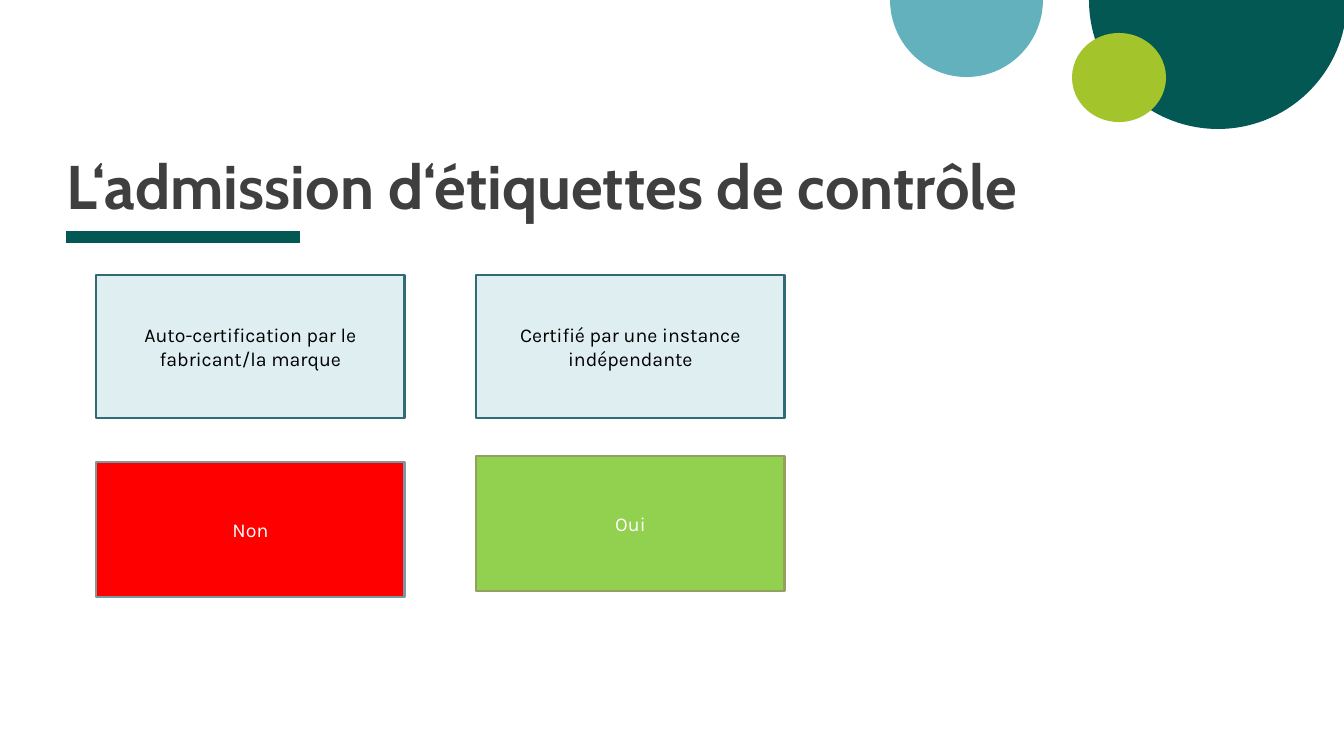
"""Build the slide on the admission of control labels."""
from dataclasses import dataclass

from lxml.etree import SubElement
from pptx import Presentation
from pptx.dml.color import RGBColor
from pptx.enum.shapes import MSO_CONNECTOR, MSO_SHAPE
from pptx.enum.text import MSO_ANCHOR, PP_ALIGN
from pptx.oxml.ns import qn
from pptx.util import Emu, Pt

TITLE = "L‘admission d‘étiquettes de contrôle"
COLUMNS = [
    {"label": "Auto-certification par le fabricant/la marque",
     "answer": "Non", "fill": "FF0000", "line": "7B9A9F", "answer_top": 462},
    {"label": "Certifié par une instance indépendante",
     "answer": "Oui", "fill": "92D050", "line": "949F60", "answer_top": 456},
]
HALF_DISCS = [
    ((1089, -129, 258, 258), "035854"),
    ((890, -78, 153, 155), "64B1BE"),
]
SMALL_DISC = ((1072, 33, 94, 89), "A3C42A")
TITLE_FRAME = (67, 46, 1087, 175)
RULE_LEFT, RULE_RIGHT, RULE_TOP = 66, 300, 237
COLUMN_LEFT, COLUMN_PITCH, BOX_WIDTH = 96, 380, 309
LABEL_TOP, LABEL_HEIGHT, ANSWER_HEIGHT = 275, 143, 135
SLIDE_WIDTH, SLIDE_HEIGHT = 1344, 756
HALF_TURN = 108


@dataclass(frozen=True)
class Theme:
    heading_font: str = "Cabin"
    body_font: str = "Karla"
    heading_size: int = 44
    body_size: int = 14
    heading: str = "3F3F3F"
    rule: str = "035854"
    label_fill: str = "CAE4E9"
    label_line: str = "316C76"
    label_text: str = "000000"
    answer_text: str = "FFFFFF"
    label_opacity: int = 62
    rule_width: int = 8
    box_line_width: int = 2


THEME = Theme()


def px(length):
    return Emu(round(length * 914400 / 100.8))


def color(value):
    return RGBColor.from_string(value)


def style_font(paragraph, name, size, text_color, bold=False):
    font = paragraph.font
    font.name, font.size, font.bold = name, Pt(size), bold
    font.color.rgb = color(text_color)


def add_filled(slide, kind, frame, fill):
    shape = slide.shapes.add_shape(kind, *map(px, frame))
    shape.shadow.inherit = False
    shape.fill.solid()
    shape.fill.fore_color.rgb = color(fill)
    shape.line.fill.background()
    return shape


def add_box(slide, frame, text, fill, line, text_color):
    shape = add_filled(slide, MSO_SHAPE.RECTANGLE, frame, fill)
    shape.line.color.rgb = color(line)
    shape.line.width = Pt(THEME.box_line_width)
    text_frame = shape.text_frame
    text_frame.word_wrap = True
    text_frame.vertical_anchor = MSO_ANCHOR.MIDDLE
    paragraph = text_frame.paragraphs[0]
    paragraph.text = text
    paragraph.alignment = PP_ALIGN.CENTER
    style_font(paragraph, THEME.body_font, THEME.body_size, text_color)
    return shape


def set_opacity(shape, percent):
    fill_color = shape.element.spPr.find(qn("a:solidFill"))[0]
    SubElement(fill_color, qn("a:alpha"), val=str(percent * 1000))


def add_decoration(slide):
    first_disc, second_disc = HALF_DISCS
    add_half_disc(slide, *first_disc)
    rule = slide.shapes.add_connector(
        MSO_CONNECTOR.STRAIGHT,
        px(RULE_LEFT), px(RULE_TOP), px(RULE_RIGHT), px(RULE_TOP))
    rule.line.color.rgb = color(THEME.rule)
    rule.line.width = Pt(THEME.rule_width)
    SubElement(rule.element.spPr, qn("a:effectLst"))
    add_half_disc(slide, *second_disc)
    add_filled(slide, MSO_SHAPE.OVAL, *SMALL_DISC)


def add_half_disc(slide, frame, fill):
    disc = add_filled(slide, MSO_SHAPE.PIE, frame, fill)
    disc.adjustments[0] = 0
    disc.adjustments[1] = HALF_TURN


def add_title(slide):
    text_frame = slide.shapes.add_textbox(*map(px, TITLE_FRAME)).text_frame
    text_frame.word_wrap = True
    text_frame.vertical_anchor = MSO_ANCHOR.BOTTOM
    text_frame.margin_left = text_frame.margin_right = 0
    text_frame.margin_top = text_frame.margin_bottom = 0
    paragraph = text_frame.paragraphs[0]
    paragraph.text = TITLE
    paragraph.line_spacing = 0.8
    style_font(paragraph, THEME.heading_font, THEME.heading_size,
               THEME.heading, bold=True)


def add_columns(slide):
    for index, column in enumerate(COLUMNS):
        left = COLUMN_LEFT + index * COLUMN_PITCH
        label = add_box(
            slide, (left, LABEL_TOP, BOX_WIDTH, LABEL_HEIGHT), column["label"],
            THEME.label_fill, THEME.label_line, THEME.label_text)
        set_opacity(label, THEME.label_opacity)
        add_box(
            slide, (left, column["answer_top"], BOX_WIDTH, ANSWER_HEIGHT),
            column["answer"], column["fill"], column["line"],
            THEME.answer_text)


def main():
    presentation = Presentation()
    presentation.slide_width = px(SLIDE_WIDTH)
    presentation.slide_height = px(SLIDE_HEIGHT)
    slide = presentation.slides.add_slide(presentation.slide_layouts[6])
    add_decoration(slide)
    add_title(slide)
    add_columns(slide)
    presentation.save("out.pptx")


if __name__ == "__main__":
    main()
